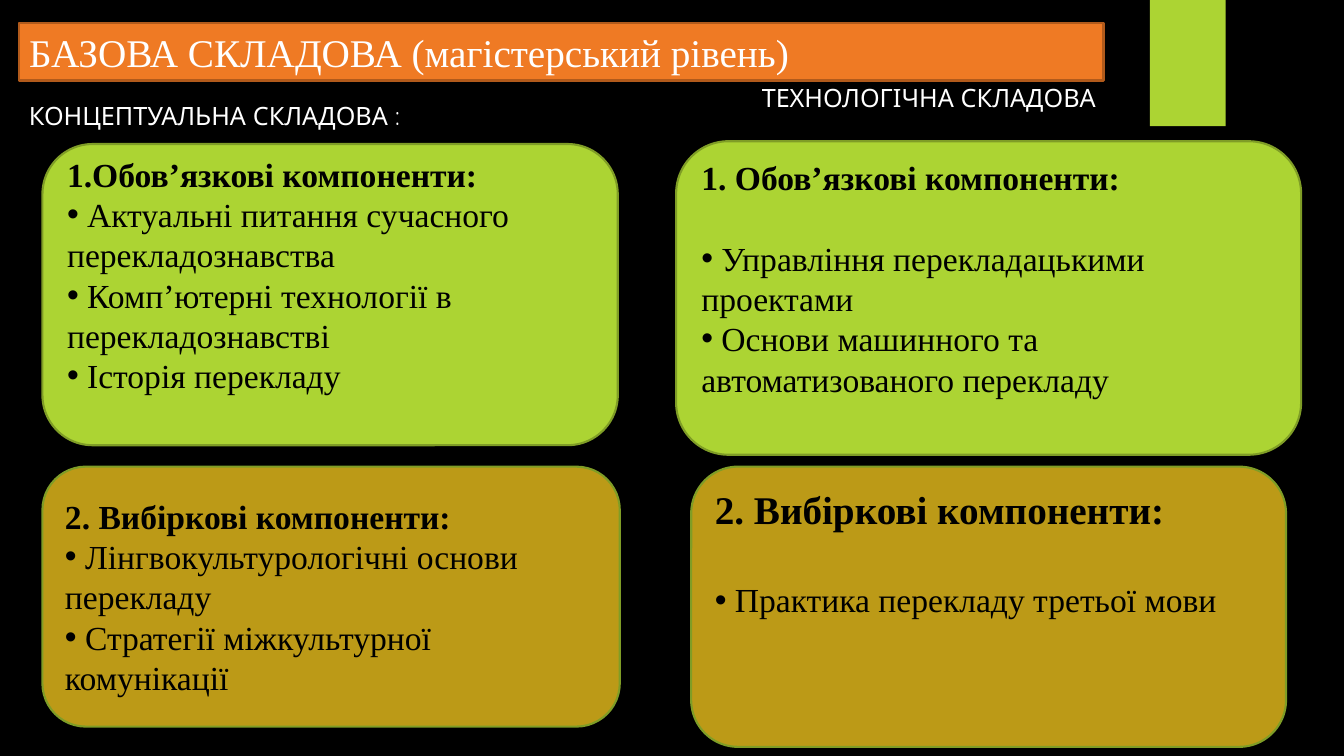
from dataclasses import dataclass

import pptx
import pptx.dml.color
import pptx.enum.shapes
import pptx.enum.text
import pptx.oxml.ns
import pptx.util
from lxml import etree
from pptx.util import Cm, Pt

SERIF = "Times New Roman"
SANS = "Quicksand"
BLACK, WHITE = "000000", "FFFFFF"
LIME, OLIVE = "ACD433", "7F9D26"
GOLD = "BC9A17"
ORANGE, RUST = "EF7A24", "B15A1B"
SHAPES = pptx.enum.shapes.MSO_SHAPE
ANCHORS = pptx.enum.text.MSO_ANCHOR


@dataclass
class Area:
    """A rectangle on the slide, in centimetres."""
    left: float
    top: float
    width: float
    height: float

    def lengths(self) -> tuple:
        return Cm(self.left), Cm(self.top), Cm(self.width), Cm(self.height)


@dataclass
class Label:
    text: str
    area: Area


@dataclass
class Card:
    heading: str
    items: list[str]
    area: Area
    fill: str
    heading_size: int = 24
    heading_gap: float = 0
    anchor: ANCHORS = ANCHORS.MIDDLE
    bottom_inset: float = 0.13


TITLE = Label("БАЗОВА СКЛАДОВА (магістерський рівень)", Area(0.48, 0.58, 27.33, 1.45))
ACCENT = Area(28.98, 0, 1.91, 3.18)
LABELS = [
    Label("КОНЦЕПТУАЛЬНА СКЛАДОВА :", Area(0.48, 2.41, 10.62, 1.02)),
    Label("ТЕХНОЛОГІЧНА СКЛАДОВА", Area(18.95, 1.96, 10.67, 1.02)),
]
CARDS = [
    Card("1.Обов’язкові компоненти:",
         ["Актуальні питання сучасного перекладознавства",
          "Комп’ютерні технології в перекладознавстві",
          "Історія перекладу"],
         Area(1.07, 3.63, 14.5, 7.59), LIME, bottom_inset=1.14),
    Card("1. Обов’язкові компоненти:",
         ["Управління перекладацькими проектами",
          "Основи машинного та автоматизованого перекладу"],
         Area(17.04, 3.56, 15.75, 7.9), LIME, heading_gap=28.8, bottom_inset=1.14),
    Card("2. Вибіркові компоненти:",
         ["Лінгвокультурологічні основи перекладу",
          "Стратегії міжкультурної комунікації"],
         Area(1.07, 11.76, 14.55, 6.55), GOLD),
    Card("2. Вибіркові компоненти:",
         ["Практика перекладу третьої мови"],
         Area(17.42, 11.76, 14.99, 7.06), GOLD,
         heading_size=28, heading_gap=33.6, anchor=ANCHORS.TOP),
]


def color(value: str) -> pptx.dml.color.RGBColor:
    return pptx.dml.color.RGBColor.from_string(value)


def paint(shape, fill: str, line: str | None = None) -> None:
    shape.fill.solid()
    shape.fill.fore_color.rgb = color(fill)
    if line is None:
        shape.line.fill.background()
    else:
        shape.line.color.rgb = color(line)
        shape.line.width = Pt(1.5)


def add_span(para, text: str, font: str, size: int, tint: str, bold: bool = False) -> None:
    para.alignment = pptx.enum.text.PP_ALIGN.LEFT
    span = para.add_run()
    span.text = text
    span.font.name = font
    span.font.size = Pt(size)
    span.font.bold = bold
    span.font.color.rgb = color(tint)


def add_bullet(para) -> None:
    """Put an inline bullet before the text, with wrapped lines at the margin."""
    properties = para._p.get_or_add_pPr()
    properties.set("marL", "0")
    properties.set("indent", "0")
    etree.SubElement(properties, pptx.oxml.ns.qn("a:buFont"), typeface="Arial")
    etree.SubElement(properties, pptx.oxml.ns.qn("a:buChar"), char="•")


def add_block(slide, kind: SHAPES, area: Area, fill: str, line: str | None = None):
    block = slide.shapes.add_shape(kind, *area.lengths())
    block.shadow.inherit = False
    paint(block, fill, line)
    return block


def format_title(slide) -> None:
    title = slide.shapes.title
    title.left, title.top, title.width, title.height = TITLE.area.lengths()
    paint(title, ORANGE, RUST)
    frame = title.text_frame
    frame.word_wrap = True
    frame.auto_size = pptx.enum.text.MSO_AUTO_SIZE.NONE
    frame.vertical_anchor = ANCHORS.TOP
    add_span(frame.paragraphs[0], TITLE.text, SERIF, 28, WHITE)


def add_label(slide, label: Label) -> None:
    box = slide.shapes.add_textbox(*label.area.lengths())
    box.text_frame.word_wrap = True
    add_span(box.text_frame.paragraphs[0], label.text, SANS, 18, WHITE)


def add_card(slide, card: Card) -> None:
    box = add_block(slide, SHAPES.ROUNDED_RECTANGLE, card.area, card.fill, OLIVE)
    frame = box.text_frame
    frame.word_wrap = True
    frame.vertical_anchor = card.anchor
    frame.margin_bottom = Cm(card.bottom_inset)
    heading = frame.paragraphs[0]
    add_span(heading, card.heading, SERIF, card.heading_size, BLACK, bold=True)
    heading.space_after = Pt(card.heading_gap)
    for item in card.items:
        para = frame.add_paragraph()
        add_bullet(para)
        add_span(para, f" {item}", SERIF, 24, BLACK)


def main() -> None:
    deck = pptx.Presentation()
    deck.slide_width, deck.slide_height = Cm(33.87), Cm(19.05)
    slide = deck.slides.add_slide(deck.slide_layouts.get_by_name("Title Only"))
    slide.background.fill.solid()
    slide.background.fill.fore_color.rgb = color(BLACK)
    add_block(slide, SHAPES.RECTANGLE, ACCENT, LIME)
    format_title(slide)
    for label in LABELS:
        add_label(slide, label)
    for card in CARDS:
        add_card(slide, card)
    deck.save("out.pptx")


if __name__ == "__main__":
    main()
